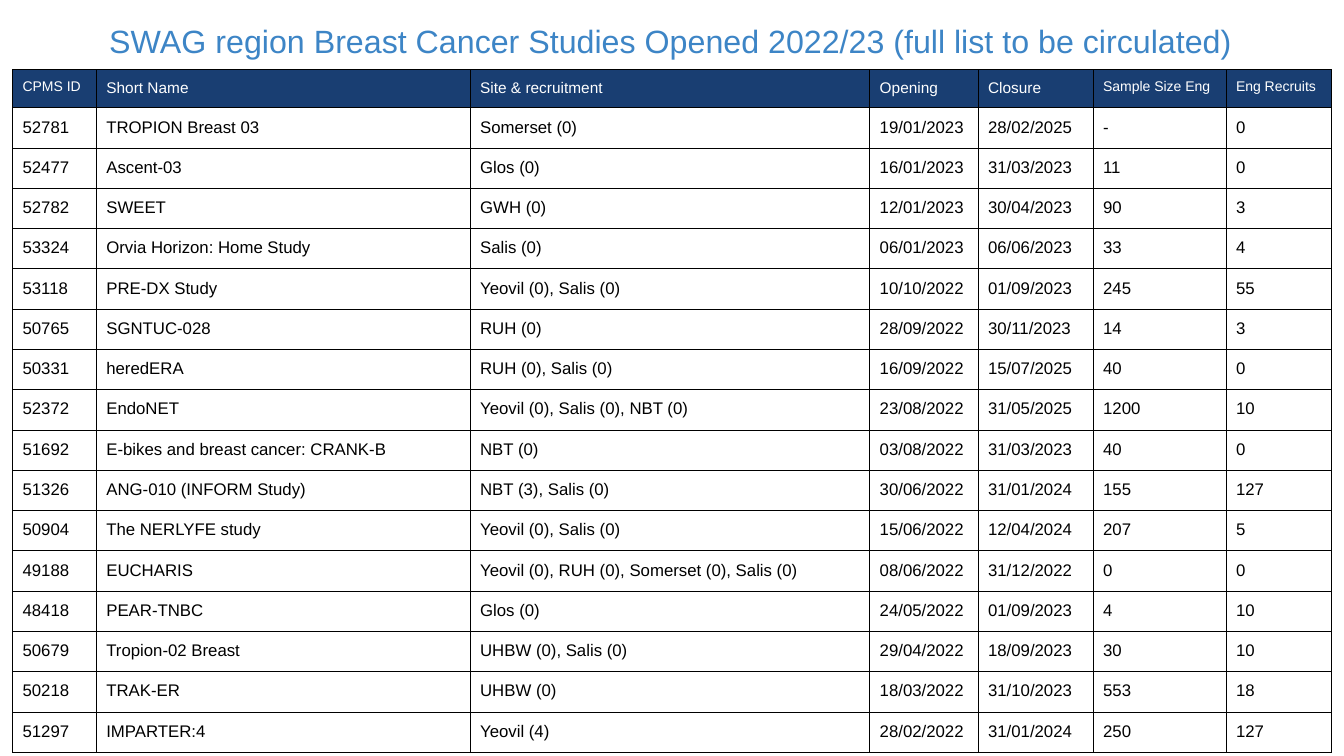
from lxml.etree import SubElement
from pptx import Presentation
from pptx.dml.color import RGBColor
from pptx.enum.text import MSO_ANCHOR, PP_ALIGN
from pptx.oxml.ns import qn
from pptx.util import Cm, Pt

TITLE = "SWAG region Breast Cancer Studies Opened 2022/23 (full list to be circulated)"
HEADERS = [
    ("CPMS ID", 10), ("Short Name", 11), ("Site & recruitment", 11), ("Opening", 11),
    ("Closure", 11), ("Sample Size Eng", 10), ("Eng Recruits", 10),
]
STUDIES = [
    ("52781", "TROPION Breast 03", "Somerset (0)", "19/01/2023", "28/02/2025", "-", "0"),
    ("52477", "Ascent-03", "Glos (0)", "16/01/2023", "31/03/2023", "11", "0"),
    ("52782", "SWEET", "GWH (0)", "12/01/2023", "30/04/2023", "90", "3"),
    ("53324", "Orvia Horizon: Home Study", "Salis (0)", "06/01/2023", "06/06/2023", "33", "4"),
    ("53118", "PRE-DX Study", "Yeovil (0), Salis (0)", "10/10/2022", "01/09/2023", "245", "55"),
    ("50765", "SGNTUC-028", "RUH (0)", "28/09/2022", "30/11/2023", "14", "3"),
    ("50331", "heredERA", "RUH (0), Salis (0)", "16/09/2022", "15/07/2025", "40", "0"),
    ("52372", "EndoNET", "Yeovil (0), Salis (0), NBT (0)", "23/08/2022", "31/05/2025", "1200", "10"),
    ("51692", "E-bikes and breast cancer: CRANK-B", "NBT (0)", "03/08/2022", "31/03/2023", "40", "0"),
    ("51326", "ANG-010 (INFORM Study)", "NBT (3), Salis (0)", "30/06/2022", "31/01/2024", "155", "127"),
    ("50904", "The NERLYFE study", "Yeovil (0), Salis (0)", "15/06/2022", "12/04/2024", "207", "5"),
    ("49188", "EUCHARIS", "Yeovil (0), RUH (0), Somerset (0), Salis (0)", "08/06/2022", "31/12/2022", "0", "0"),
    ("48418", "PEAR-TNBC", "Glos (0)", "24/05/2022", "01/09/2023", "4", "10"),
    ("50679", "Tropion-02 Breast", "UHBW (0), Salis (0)", "29/04/2022", "18/09/2023", "30", "10"),
    ("50218", "TRAK-ER", "UHBW (0)", "18/03/2022", "31/10/2023", "553", "18"),
    ("51297", "IMPARTER:4", "Yeovil (4)", "28/02/2022", "31/01/2024", "250", "127"),
]
COL_WIDTHS = [2.11, 9.42, 10.07, 2.73, 2.9, 3.35, 2.65]
HEADER_HEIGHT, BODY_HEIGHT = Cm(0.96), Cm(16.25)
INSET = Cm(0.25)
FONT = "Arial"
BLUE = RGBColor(0x3D, 0x85, 0xC6)
NAVY = RGBColor(0x19, 0x3E, 0x72)
WHITE = RGBColor(0xFF, 0xFF, 0xFF)
BLACK = RGBColor(0, 0, 0)


def set_text(box, text, size, color, align=PP_ALIGN.LEFT):
    box.margin_left = box.margin_right = INSET
    box.margin_top = box.margin_bottom = INSET
    p = box.paragraphs[0] if hasattr(box, "paragraphs") else box.text_frame.paragraphs[0]
    p.text = text
    p.alignment = align
    p.font.name = FONT
    p.font.size = Pt(size)
    p.font.color.rgb = color


def style_cell(cell, fill):
    tc_pr = cell._tc.get_or_add_tcPr()
    for side in ("a:lnL", "a:lnR", "a:lnT", "a:lnB"):
        ln = SubElement(tc_pr, qn(side), w=str(Pt(0.75)))
        SubElement(SubElement(ln, qn("a:solidFill")), qn("a:srgbClr"), val=str(BLACK))
    cell.fill.solid()
    cell.fill.fore_color.rgb = fill


prs = Presentation()
prs.slide_width, prs.slide_height = Cm(33.87), Cm(19.05)
s = prs.slides.add_slide(prs.slide_layouts[6])

tf = s.shapes.add_textbox(Cm(0.48), Cm(0.25), Cm(32.89), Cm(1.5)).text_frame
tf.word_wrap = True
tf.vertical_anchor = MSO_ANCHOR.BOTTOM
set_text(tf, TITLE, 23, BLUE, PP_ALIGN.CENTER)

table = s.shapes.add_table(
    len(STUDIES) + 1, len(HEADERS), Cm(0.32), Cm(1.75),
    Cm(sum(COL_WIDTHS)), HEADER_HEIGHT + BODY_HEIGHT,
).table
for col, width in zip(table.columns, COL_WIDTHS):
    col.width = Cm(width)
for row in table.rows:
    row.height = BODY_HEIGHT // len(STUDIES)
table.rows[0].height = HEADER_HEIGHT

for c, (label, size) in enumerate(HEADERS):
    cell = table.cell(0, c)
    set_text(cell, label, size, WHITE)
    style_cell(cell, NAVY)
for r, study in enumerate(STUDIES, 1):
    for c, value in enumerate(study):
        cell = table.cell(r, c)
        set_text(cell, value, 12, BLACK)
        style_cell(cell, WHITE)

prs.save("out.pptx")
